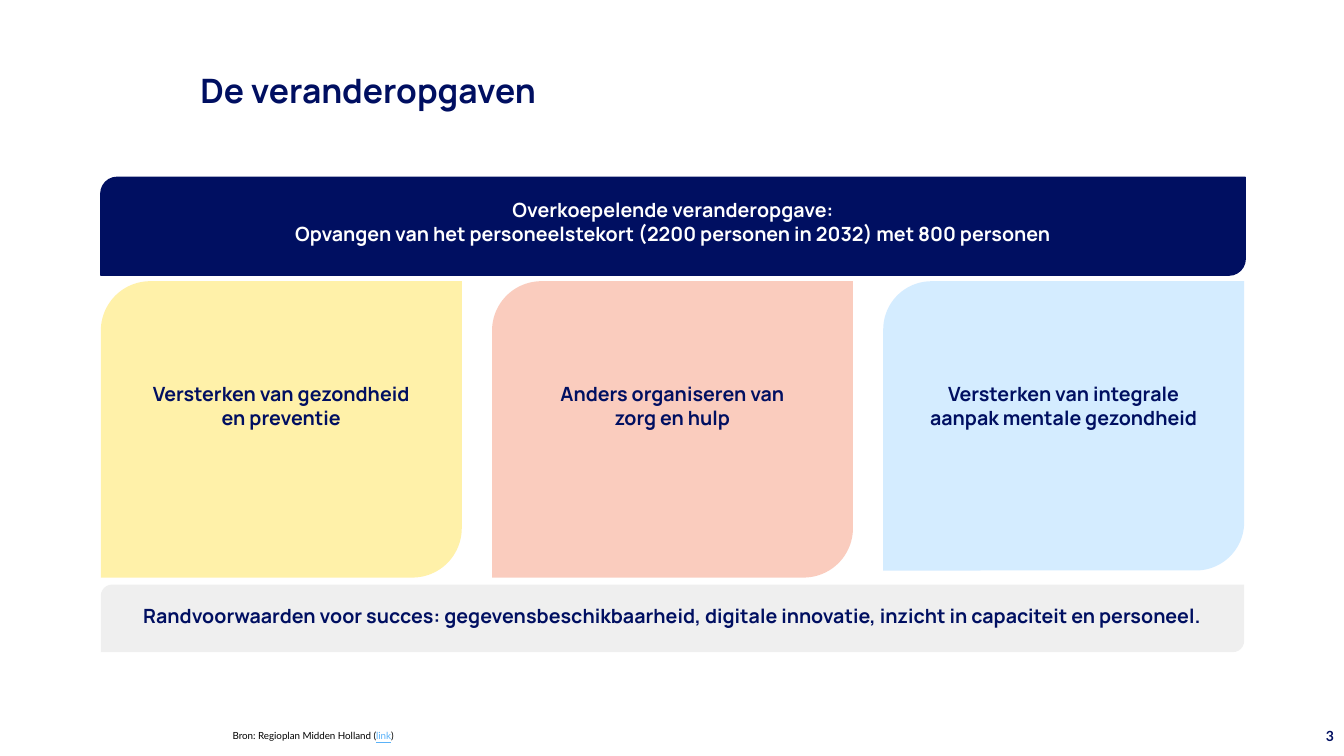
from dataclasses import dataclass

from lxml import etree
from pptx import Presentation
from pptx import util as u
from pptx.dml.color import RGBColor
from pptx.enum import shapes, text
from pptx.oxml.ns import qn


@dataclass(frozen=True)
class Theme:
    navy: str = "000F61"
    white: str = "FFFFFF"
    black: str = "000000"
    link: str = "5AB2F8"
    yellow: str = "FFDC2A"
    orange: str = "EF582A"
    blue: str = "55B5FF"
    grey: str = "D9D9D9"
    heading_font: str = "Manrope"
    small_font: str = "Lato"
    title_size: int = 24
    body_size: int = 14
    number_size: int = 10
    source_size: int = 7


theme = Theme()
CENTER, RIGHT = text.PP_ALIGN.CENTER, text.PP_ALIGN.RIGHT

deck = Presentation()
deck.slide_width, deck.slide_height = u.Inches(13.33), u.Inches(7.5)
page = deck.slides.add_slide(deck.slide_layouts[6])


def add_span(para, words, size, color, font=theme.heading_font, bold=True):
    span = para.add_run()
    span.text = words
    span.font.name, span.font.size, span.font.bold = font, u.Pt(size), bold
    span.font.color.rgb = RGBColor.from_string(color)
    return span


def add_panel(place, color, opacity, lines, text_color=theme.navy, top_inset=0.16):
    """Add a panel with two rounded corners; opacity is a percentage."""
    panel = page.shapes.add_shape(
        shapes.MSO_SHAPE.ROUND_2_DIAG_RECTANGLE, *map(u.Inches, place))
    panel.shadow.inherit = False
    panel.fill.solid()
    panel.fill.fore_color.rgb = RGBColor.from_string(color)
    if opacity < 100:
        fill_color = panel.fill._xPr.find(qn("a:solidFill"))[0]
        etree.SubElement(fill_color, qn("a:alpha"), val=str(opacity * 1000))
    panel.line.fill.background()
    frame = panel.text_frame
    frame.word_wrap = True
    frame.vertical_anchor = text.MSO_ANCHOR.TOP
    frame.margin_left = frame.margin_right = frame.margin_bottom = u.Inches(0.16)
    frame.margin_top = u.Inches(top_inset)
    for index, line in enumerate(lines):
        para = frame.add_paragraph() if index else frame.paragraphs[0]
        para.alignment = CENTER
        add_span(para, line, theme.body_size, text_color)
    return panel


# Title, source and page number
paras = {}
for name, place in {
    "title": (1.89, 0.66, 8.64, 0.51),
    "source": (2.21, 7.1, 5.3, 0.4),
    "number": (10.33, 7.1, 3, 0.4),
}.items():
    box = page.shapes.add_textbox(*map(u.Inches, place))
    box.text_frame.word_wrap = True
    box.text_frame.vertical_anchor = text.MSO_ANCHOR.MIDDLE
    paras[name] = box.text_frame.paragraphs[0]

paras["title"].line_spacing = 0.9
add_span(paras["title"], "De veranderopgaven", theme.title_size, theme.navy)
for words, color in (("Bron: Regioplan Midden Holland (", theme.black),
                     ("link", theme.link), (")", theme.black)):
    span = add_span(paras["source"], words, theme.source_size, color,
                    theme.small_font, bold=False)
    span.font.underline = color == theme.link
paras["number"].alignment = RIGHT
add_span(paras["number"], "3", theme.number_size, theme.navy, theme.small_font)

# Three change themes
cards = (
    (theme.yellow, 40, 2.94, ("Versterken van gezondheid", "en preventie")),
    (theme.orange, 30, 2.94, ("Anders organiseren van", "zorg en hulp")),
    (theme.blue, 25, 2.87, ("Versterken van integrale aanpak mentale gezondheid",)),
)
for column, (color, opacity, height, lines) in enumerate(cards):
    add_panel((1 + column * 3.88, 2.79, 3.58, height), color, opacity, lines,
              top_inset=0.86)

# Conditions below and overall task above
add_panel((1, 5.8, 11.34, 0.67), theme.grey, 40, (
    "Randvoorwaarden voor succes: gegevensbeschikbaarheid, digitale innovatie, "
    "inzicht in capaciteit en personeel.",))
banner = add_panel((1, 1.76, 11.35, 0.97), theme.navy, 100, (
    "Overkoepelende veranderopgave:",
    "Opvangen van het personeelstekort (2200 personen in 2032) met 800 personen",
), theme.white)
banner.line.color.rgb = RGBColor.from_string(theme.navy)
banner.line.width = u.Pt(1)

deck.save("out.pptx")
